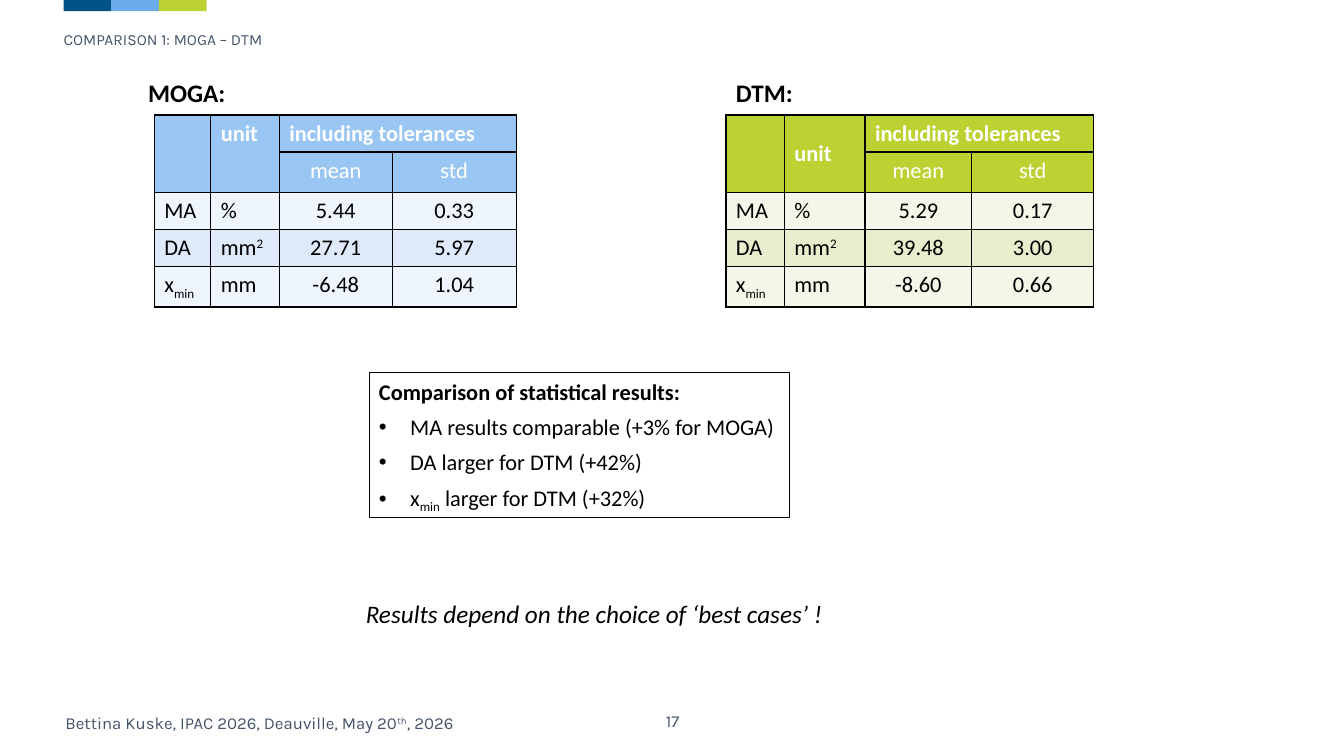
"""Build the slide comparing MOGA and DTM results."""
from lxml import etree
from pptx import Presentation
from pptx.dml.color import RGBColor
from pptx.enum.shapes import MSO_SHAPE
from pptx.enum.text import MSO_ANCHOR, PP_ALIGN
from pptx.oxml.ns import qn
from pptx.util import Inches, Pt

RECT = MSO_SHAPE.RECTANGLE
TOP, MIDDLE = MSO_ANCHOR.TOP, MSO_ANCHOR.MIDDLE
LEFT, CENTER = PP_ALIGN.LEFT, PP_ALIGN.CENTER
BLACK, WHITE = RGBColor(0, 0, 0), RGBColor(255, 255, 255)
SLATE = RGBColor(0x44, 0x54, 0x6A)
NAVY, SKY = RGBColor(0x00, 0x51, 0x86), RGBColor(0x6C, 0xAB, 0xE9)
LIME = RGBColor(0xBC, 0xD2, 0x33)
BLUE = RGBColor(0x9A, 0xC6, 0xF3)
BLUE_PALE, BLUE_SOFT = RGBColor(0xEF, 0xF5, 0xFD), RGBColor(0xDE, 0xEA, 0xFA)
LIME_PALE, LIME_SOFT = RGBColor(0xF3, 0xF7, 0xE8), RGBColor(0xE7, 0xEE, 0xCE)
SUPER, SUB = 30000, -25000

HEADING = "COMPARISON 1: MOGA – DTM"
FOOTER = [("Bettina Kuske, IPAC 2026, Deauville, May 20", 0), ("th", SUPER), (", 2026", 0)]
PAGE = "17"
NOTE = "Results depend on the choice of ‘best cases’ !"
X_MIN = [("x", 0), ("min", SUB)]
FINDINGS_TITLE = "Comparison of statistical results:"
FINDINGS = ["MA results comparable (+3% for MOGA)", "DA larger for DTM (+42%)",
            X_MIN + [(" larger for DTM (+32%)", 0)]]
HEADER = [["", "unit", "including tolerances", ""], ["", "", "mean", "std"]]
QUANTITIES = [["MA", "%"], ["DA", [("mm", 0), ("2", SUPER)]], [X_MIN, "mm"]]
TABLES = [
    dict(title="MOGA:", title_x=10.28, x=11.48, cols=[4.2, 5.1, 8.4, 9.23],
         values=[["5.44", "0.33"], ["27.71", "5.97"], ["-6.48", "1.04"]],
         fills=[BLUE, BLUE, BLUE_PALE, BLUE_SOFT, BLUE_PALE], unit_anchor=TOP),
    dict(title="DTM:", title_x=54.01, x=54.01, cols=[4.35, 6, 7.95, 9.08],
         values=[["5.29", "0.17"], ["39.48", "3.00"], ["-8.60", "0.66"]],
         fills=[LIME, LIME, LIME_PALE, LIME_SOFT, LIME_PALE], unit_anchor=MIDDLE),
]
TABLE_Y, ROW_H = 15.2, 4.88

prs = Presentation()
prs.slide_width, prs.slide_height = Inches(13.33), Inches(7.5)
s = prs.slides.add_slide(prs.slide_layouts[6])


def across(share):
    return int(prs.slide_width * share / 100)


def down(share):
    return int(prs.slide_height * share / 100)


def place(x, y, w, h):
    return across(x), down(y), across(w), down(h)


def write(p, text, size=16, font="Calibri", color=BLACK, bold=False, italic=False,
          align=LEFT, after=0, bullet=False):
    if bullet:
        pPr = p._p.get_or_add_pPr()
        pPr.set("marL", str(Inches(0.31)))
        pPr.set("indent", str(-Inches(0.31)))
        etree.SubElement(pPr, qn("a:buFont"), typeface="Arial")
        etree.SubElement(pPr, qn("a:buChar"), char="•")
    p.alignment, p.space_after = align, Pt(after)
    for part, baseline in [(text, 0)] if isinstance(text, str) else text:
        r = p.add_run()
        r.text = part
        f = r.font
        f.size, f.name, f.bold, f.italic = Pt(size), font, bold, italic
        f.color.rgb = color
        if baseline:
            r._r.get_or_add_rPr().set("baseline", str(baseline))


def add_text(box, text, wrap=True, anchor=TOP, **style):
    tf = s.shapes.add_textbox(*place(*box)).text_frame
    tf.word_wrap, tf.vertical_anchor = wrap, anchor
    write(tf.paragraphs[0], text, **style)
    return tf


def add_rect(box, fill=None):
    sp = s.shapes.add_shape(RECT, *place(*box))
    sp.shadow.inherit = False
    if fill is None:
        sp.fill.background()
        sp.line.color.rgb, sp.line.width = BLACK, Pt(0.75)
    else:
        sp.fill.solid()
        sp.fill.fore_color.rgb = fill
        sp.line.fill.background()
    return sp


def add_borders(cell):
    tcPr = cell._tc.get_or_add_tcPr()
    for side in ("lnL", "lnR", "lnT", "lnB"):
        ln = etree.SubElement(tcPr, qn("a:" + side), w=str(Pt(1)))
        fill = etree.SubElement(ln, qn("a:solidFill"))
        etree.SubElement(fill, qn("a:srgbClr"), val=str(BLACK))


def add_results(title, title_x, x, cols, values, fills, unit_anchor):
    add_text((title_x, 9.6, 10, 5.33), title, wrap=False, size=18, bold=True)
    rows = HEADER + [q + v for q, v in zip(QUANTITIES, values)]
    frame = place(x, TABLE_Y, sum(cols), ROW_H * len(rows))
    table = s.shapes.add_table(len(rows), len(cols), *frame).table
    table.first_row = table.horz_banding = False
    for column, width in zip(table.columns, cols):
        column.width = across(width)
    for i, (row, fill) in enumerate(zip(rows, fills)):
        table.rows[i].height = down(ROW_H)
        for j, text in enumerate(row):
            cell = table.cell(i, j)
            add_borders(cell)
            cell.fill.solid()
            cell.fill.fore_color.rgb = fill
            write(cell.text_frame.paragraphs[0], text, bold=i == 0,
                  color=WHITE if i < len(HEADER) else BLACK,
                  align=CENTER if i > 0 and j > 1 else LEFT)
    table.cell(0, 1).vertical_anchor = unit_anchor
    for start, end in [((0, 0), (1, 0)), ((0, 1), (1, 1)), ((0, 2), (0, 3))]:
        table.cell(*start).merge(table.cell(*end))


for i, color in enumerate([NAVY, SKY, LIME]):
    add_rect((4.73 + 3.55 * i, 0, 3.55, 1.47), color)

small = dict(font="Karla", color=SLATE)
tf = add_text((4.73, 4.27, 17.7, 3.33), HEADING, size=11.1, **small)
tf.margin_left = tf.margin_right = tf.margin_top = tf.margin_bottom = 0
tf.paragraphs[0].line_spacing = 0.9
add_text((46.59, 92.67, 6.9, 5.33), PAGE, anchor=MIDDLE, size=12, align=CENTER, **small)
add_text((4.13, 92.93, 33.76, 5.33), FOOTER, anchor=MIDDLE, size=12, **small)

for results in TABLES:
    add_results(**results)

tf = add_rect((27.46, 49.33, 31.28, 19.07)).text_frame
tf.word_wrap, tf.vertical_anchor = False, TOP
write(tf.paragraphs[0], FINDINGS_TITLE, bold=True, after=6)
for finding in FINDINGS:
    write(tf.add_paragraph(), finding, after=6, bullet=True)

add_text((26.48, 78.53, 35.86, 5.33), NOTE, wrap=False, size=18, italic=True)

prs.save("out.pptx")
